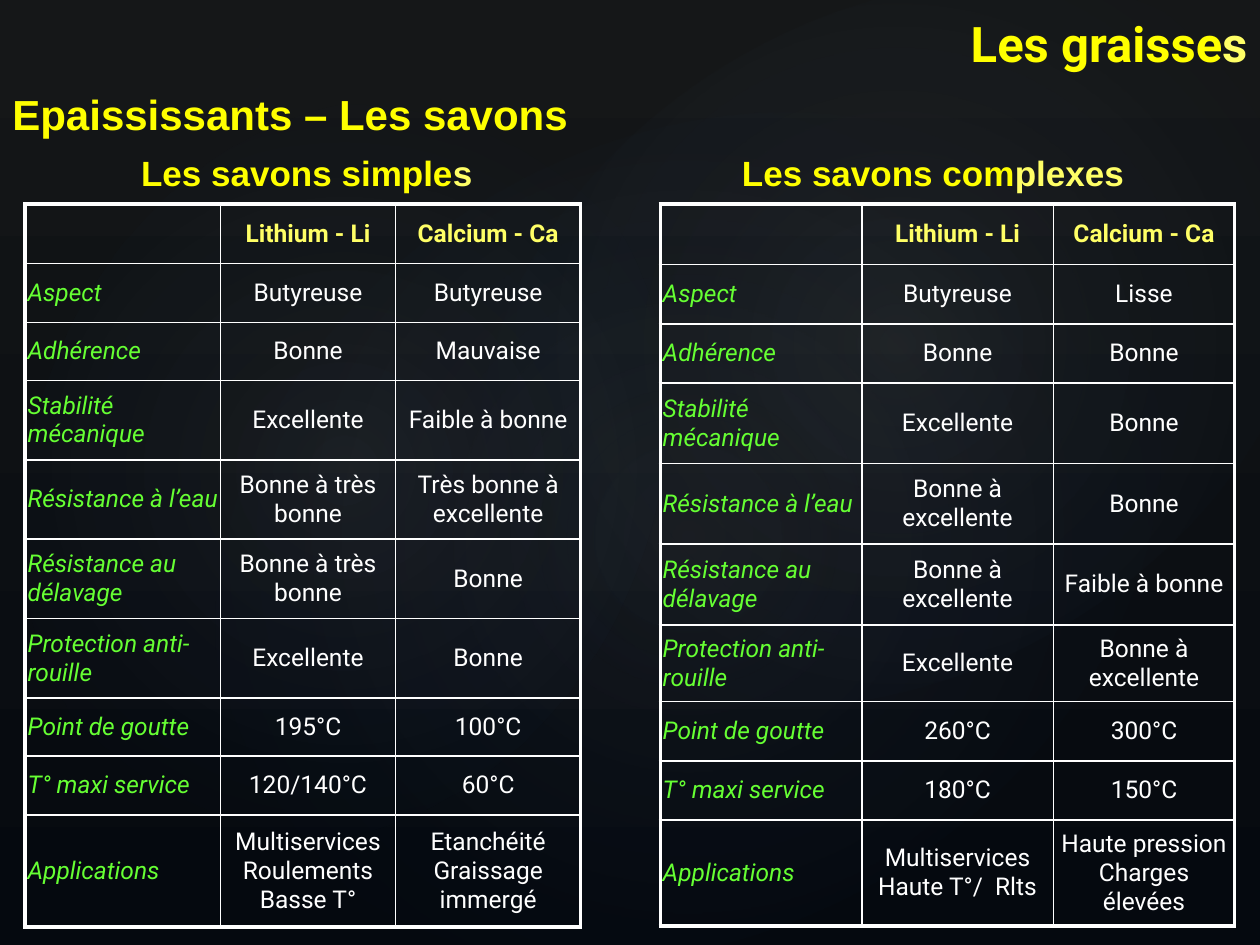
import pptx
import pptx.dml.color
import pptx.enum.shapes
import pptx.enum.text
import pptx.oxml
import pptx.oxml.ns
import pptx.util

Inches = pptx.util.Inches
Pt = pptx.util.Pt
ALIGN = pptx.enum.text.PP_ALIGN
MIDDLE = pptx.enum.text.MSO_ANCHOR.MIDDLE

COLORS = {
    "top": "151718", "bottom": "05090F", "glow": "ACB3B6", "glow_edge": "2F5897",
    "yellow": "FFFF00", "pale": "FFFF66", "green": "66FF33", "white": "FFFFFF",
}
HEADER = {"name": "Roboto", "size": Pt(14), "bold": True, "italic": False, "color": "pale"}
PROPERTY = {**HEADER, "bold": False, "italic": True, "color": "green"}
VALUE = {**HEADER, "bold": False, "color": "white"}
TITLE = {"name": "Roboto", "size": Pt(28), "bold": True, "color": "yellow"}
SUBTITLE = {"name": "Arial", "size": Pt(24), "bold": True, "color": "yellow"}
CAPTION = {**SUBTITLE, "size": Pt(20)}
CELL = {"margin_left": Inches(0.02), "margin_right": Inches(0.02),
        "margin_top": Inches(0.05), "margin_bottom": Inches(0.05), "vertical_anchor": MIDDLE}
FRAME = {"word_wrap": True, "auto_size": pptx.enum.text.MSO_AUTO_SIZE.NONE,
         "vertical_anchor": MIDDLE}

GLOWS = [
    ((1.5, 1.14, 7.92, 6.24), 328.7, 7),
    ((-0.3, 1.28, 6.06, 4.9), 294.3, 8),
    ((3.58, 0.13, 7.09, 5.2), 328.7, 8),
]
PROPERTIES = ["", "Aspect", "Adhérence", "Stabilité mécanique", "Résistance à l’eau",
              "Résistance au délavage", "Protection anti-rouille", "Point de goutte",
              "T° maxi service", "Applications"]
SIMPLE_SOAPS = [
    ("Lithium - Li", "Calcium - Ca"), ("Butyreuse", "Butyreuse"), ("Bonne", "Mauvaise"),
    ("Excellente", "Faible à bonne"), ("Bonne à très bonne", "Très bonne à excellente"),
    ("Bonne à très bonne", "Bonne"), ("Excellente", "Bonne"), ("195°C", "100°C"),
    ("120/140°C", "60°C"),
    ("Multiservices Roulements Basse T°", "Etanchéité Graissage immergé"),
]
COMPLEX_SOAPS = [
    ("Lithium - Li", "Calcium - Ca"), ("Butyreuse", "Lisse"), ("Bonne", "Bonne"),
    ("Excellente", "Bonne"), ("Bonne à excellente", "Bonne"),
    ("Bonne à excellente", "Faible à bonne"), ("Excellente", "Bonne à excellente"),
    ("260°C", "300°C"), ("180°C", "150°C"),
    ("Multiservices Haute T°/  Rlts", "Haute pression Charges élevées"),
]
SIMPLE_ROWS = [0.47, 0.47, 0.46, 0.63, 0.63, 0.63, 0.63, 0.46, 0.47, 0.89]
COMPLEX_ROWS = [0.48, 0.47, 0.47, 0.64, 0.64, 0.64, 0.61, 0.47, 0.47, 0.84]


def set_values(target, values):
    """Set each named attribute of the target."""
    for name, value in values.items():
        setattr(target, name, value)


def rgb(name):
    """Return the named colour."""
    return pptx.dml.color.RGBColor.from_string(COLORS[name])


def add_run(paragraph, text, style):
    """Append one formatted run to a paragraph."""
    run = paragraph.add_run()
    run.text = text
    set_values(run.font, {key: value for key, value in style.items() if key != "color"})
    run.font.color.rgb = rgb(style["color"])


def write_heading(shape, box, style, align, text, pale_ending=""):
    """Place a heading and write it, with an optional paler ending."""
    set_values(shape, dict(zip(("left", "top", "width", "height"), map(Inches, box))))
    set_values(shape.text_frame, FRAME)
    paragraph = shape.text_frame.paragraphs[0]
    paragraph.alignment = align
    add_run(paragraph, text, style)
    if pale_ending:
        add_run(paragraph, pale_ending, {**style, "color": "pale"})


def add_heading(slide, box, *content):
    """Add a text box holding a heading."""
    write_heading(slide.shapes.add_textbox(*map(Inches, box)), box, *content)


def paint_background(slide):
    """Fill the slide with a dark vertical gradient."""
    fill = slide.background.fill
    fill.gradient()
    fill.gradient_angle = 270
    for stop, name in zip(fill.gradient_stops, ("top", "bottom")):
        stop.color.rgb = rgb(name)


def add_glow(slide, box, rotation, opacity):
    """Add a faint ellipse that fades out from its centre."""
    shape = slide.shapes.add_shape(pptx.enum.shapes.MSO_SHAPE.OVAL, *map(Inches, box))
    shape.rotation = rotation
    shape.shadow.inherit = False
    shape.line.fill.background()
    stops = "".join(
        f'<a:gs pos="{position}"><a:srgbClr val="{COLORS[name]}">'
        f'<a:alpha val="{alpha * 1000}"/></a:srgbClr></a:gs>'
        for position, name, alpha in ((0, "glow", opacity), (58000, "glow_edge", 0)))
    gradient = pptx.oxml.parse_xml(
        f'<a:gradFill {pptx.oxml.ns.nsdecls("a")} rotWithShape="1"><a:gsLst>{stops}</a:gsLst>'
        '<a:path path="circle"><a:fillToRect l="50000" t="50000" r="50000" b="50000"/></a:path>'
        '</a:gradFill>')
    shape.element.spPr.find(pptx.oxml.ns.qn("a:prstGeom")).addnext(gradient)


def set_borders(cell, outer_sides):
    """Draw white cell borders, thicker on the table's outer sides."""
    properties = cell._tc.get_or_add_tcPr()
    for index, (side, outer) in enumerate(zip("LRTB", outer_sides)):
        width = Pt(2.25 if outer else 1)
        properties.insert(index, pptx.oxml.parse_xml(
            f'<a:ln{side} {pptx.oxml.ns.nsdecls("a")} w="{width}"><a:solidFill>'
            f'<a:srgbClr val="{COLORS["white"]}"/></a:solidFill></a:ln{side}>'))


def add_soap_table(slide, left, columns, rows, values):
    """Add the table of properties for one family of soaps."""
    box = map(Inches, (left, 1.62, sum(columns), sum(rows)))
    table = slide.shapes.add_table(len(rows), len(columns), *box).table
    set_values(table, {"first_row": False, "horz_banding": False})
    for column, width in zip(table.columns, columns):
        column.width = Inches(width)
    for i, (height, name, pair) in enumerate(zip(rows, PROPERTIES, values)):
        table.rows[i].height = Inches(height)
        for j, text in enumerate((name, *pair)):
            cell = table.cell(i, j)
            set_values(cell, CELL)
            cell.fill.background()
            set_borders(cell, (j == 0, j == len(columns) - 1, i == 0, i == len(rows) - 1))
            paragraph = cell.text_frame.paragraphs[0]
            set_values(paragraph, {"alignment": ALIGN.CENTER if j else ALIGN.LEFT,
                                   "space_before": Pt(2.8)})
            if text:
                add_run(paragraph, text, HEADER if i == 0 else VALUE if j else PROPERTY)


def main():
    """Build and save the slide."""
    presentation = pptx.Presentation()
    set_values(presentation, {"slide_width": Inches(10), "slide_height": Inches(7.5)})
    slide = presentation.slides.add_slide(presentation.slide_layouts[5])
    paint_background(slide)
    for glow in GLOWS:
        add_glow(slide, *glow)
    add_soap_table(slide, 0.2, [1.55, 1.39, 1.47], SIMPLE_ROWS, SIMPLE_SOAPS)
    add_soap_table(slide, 5.24, [1.6, 1.52, 1.44], COMPLEX_ROWS, COMPLEX_SOAPS)
    title = slide.shapes.title
    slide.shapes.element.append(title.element)
    write_heading(title, (7.05, 0, 2.95, 0.68), TITLE, ALIGN.RIGHT, "Les graisse", "s")
    add_heading(slide, (0, 0.6, 10, 0.6), SUBTITLE, ALIGN.LEFT, "Epaississants – Les savons")
    add_heading(slide, (0.27, 1.15, 4.33, 0.44), CAPTION, ALIGN.CENTER, "Les savons simple", "s")
    add_heading(slide, (5.24, 1.15, 4.33, 0.44), CAPTION, ALIGN.CENTER, "Les savons com", "plexes")
    presentation.save("out.pptx")


if __name__ == "__main__":
    main()
